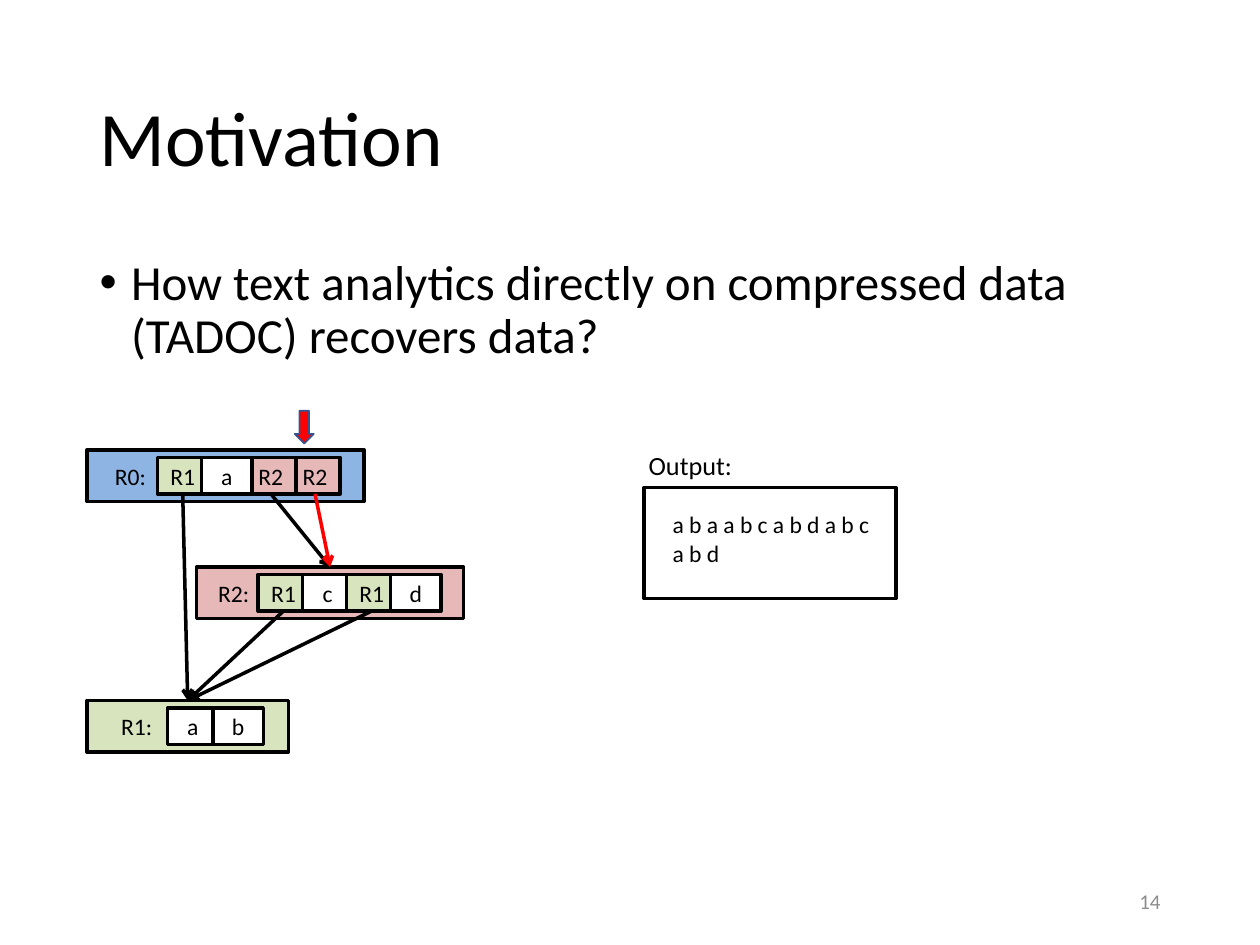
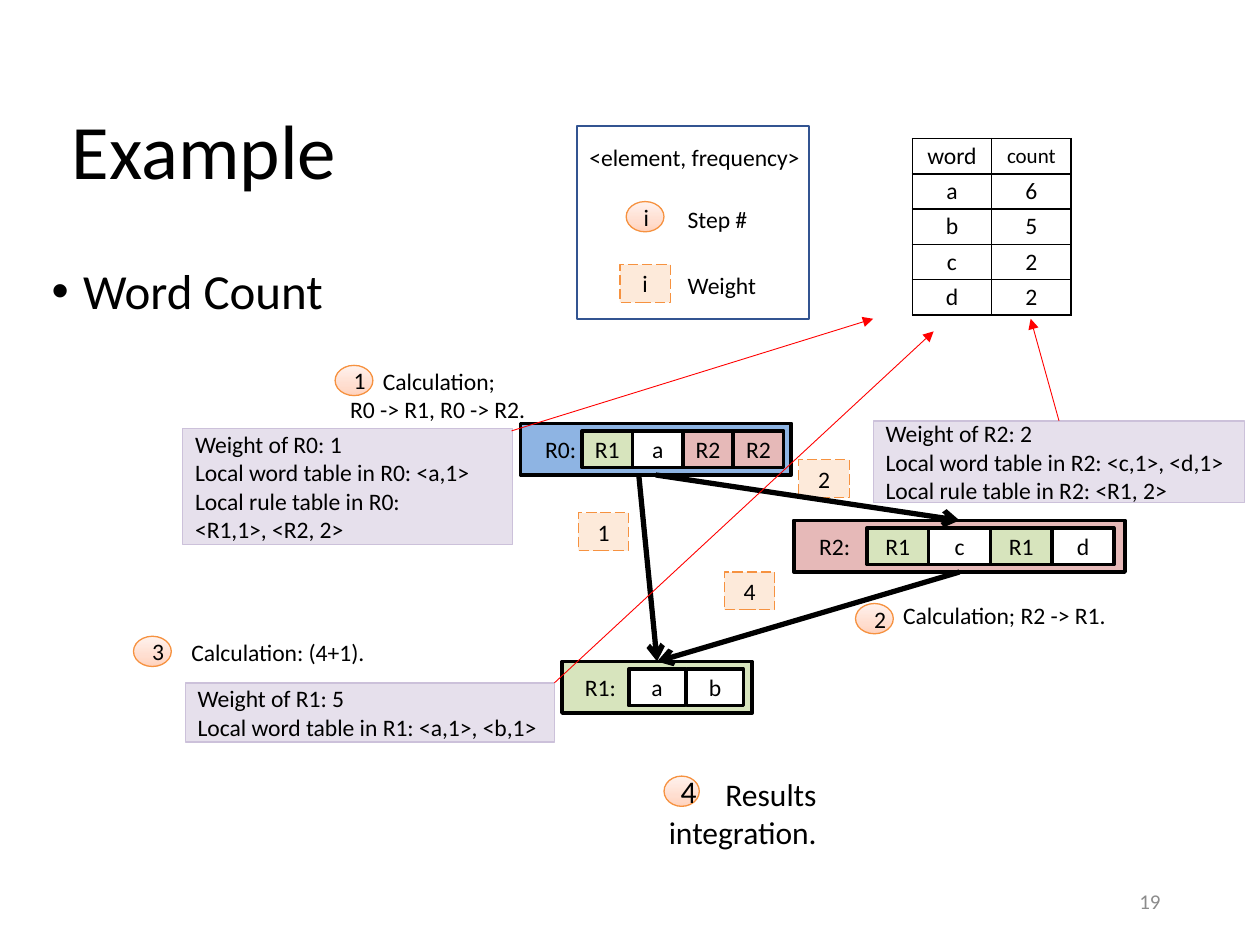
from copy import deepcopy

from lxml.etree import SubElement
from pptx import Presentation
from pptx.dml.color import RGBColor
from pptx.enum.dml import MSO_LINE
from pptx.enum.shapes import MSO_CONNECTOR, MSO_SHAPE
from pptx.enum.text import MSO_ANCHOR, MSO_AUTO_SIZE, PP_ALIGN
from pptx.oxml.ns import qn
from pptx.util import Inches, Pt

BLACK = RGBColor(0x00, 0x00, 0x00)
WHITE = RGBColor(0xFF, 0xFF, 0xFF)
GRAY = RGBColor(0x8C, 0x8C, 0x8C)
RED = RGBColor(0xFF, 0x00, 0x00)
NAVY = RGBColor(0x32, 0x54, 0x91)
BLUE = RGBColor(0x8E, 0xB4, 0xE3)
GREEN = RGBColor(0xD7, 0xE4, 0xBD)
PINK = RGBColor(0xE6, 0xB9, 0xB8)
LILAC = RGBColor(0xE6, 0xE0, 0xEC)
LILAC_EDGE = RGBColor(0xCC, 0xC1, 0xDA)
PEACH = RGBColor(0xFD, 0xEA, 0xDA)
ORANGE = RGBColor(0xF6, 0x92, 0x40)
STEP_GRADIENT = [
    (0, RGBColor(0xFF, 0xD2, 0xBD)),
    (0.35, RGBColor(0xFF, 0xDE, 0xD0)),
    (1, RGBColor(0xFF, 0xF2, 0xED)),
]
RULE_FILLS = {"R0": BLUE, "R1": GREEN, "R2": PINK}
FONT = "Calibri"


def write_text(frame, text, size=13.5, color=BLACK, align=PP_ALIGN.LEFT,
               anchor=MSO_ANCHOR.TOP, insets=(0.1, 0.1), first_indents=()):
    """Fill a text frame, one paragraph a line; first_indents are in inches."""
    frame.word_wrap = True
    frame.auto_size = MSO_AUTO_SIZE.NONE
    frame.vertical_anchor = anchor
    frame.margin_left, frame.margin_right = (Inches(inset) for inset in insets)
    for index, line in enumerate(text.split("\n")):
        paragraph = frame.add_paragraph() if index else frame.paragraphs[0]
        paragraph.alignment = align
        run = paragraph.add_run()
        run.text = line
        run.font.name = FONT
        run.font.size = Pt(size)
        run.font.color.rgb = color
        if first_indents:
            properties = paragraph._p.get_or_add_pPr()
            properties.set("marL", "0")
            properties.set("indent", str(Inches(first_indents[index])))


def add_box(slide, at, text="", kind=MSO_SHAPE.RECTANGLE, fill=None, edge=None,
            edge_width=2, **text_format):
    shape = slide.shapes.add_shape(kind, *(Inches(length) for length in at))
    shape.shadow.inherit = False
    if fill is None:
        shape.fill.background()
    else:
        shape.fill.solid()
        shape.fill.fore_color.rgb = fill
    if edge is None:
        shape.line.fill.background()
    else:
        shape.line.color.rgb = edge
        shape.line.width = Pt(edge_width)
    if text:
        write_text(shape.text_frame, text, **text_format)
    return shape


presentation = Presentation()
presentation.slide_width = Inches(10)
presentation.slide_height = Inches(7.5)
CENTERED = {"align": PP_ALIGN.CENTER, "anchor": MSO_ANCHOR.MIDDLE, "insets": (0, 0)}

# Titles, bullets and page numbers
pages = [
    ("Motivation", (0.69, 0.4, 8.62, 1.45),
     "How text analytics directly on compressed data (TADOC) recovers data?",
     (0.69, 2, 8.62, 4.76), "14"),
    ("Example", (0.47, 0.68, 4.3, 1.09), "Word Count", (0.31, 2.07, 8.62, 3.57), "19"),
]
slides = []
for title, title_at, bullet, bullet_at, number in pages:
    slide = presentation.slides.add_slide(presentation.slide_layouts[1])
    slides.append(slide)
    for placeholder, at, text, size, anchor in (
        (slide.shapes.title, title_at, title, 44, MSO_ANCHOR.MIDDLE),
        (slide.placeholders[1], bullet_at, bullet, 28, MSO_ANCHOR.TOP),
    ):
        placeholder.left, placeholder.top, placeholder.width, placeholder.height = (
            Inches(length) for length in at)
        write_text(placeholder.text_frame, text, size=size, anchor=anchor)
        placeholder.text_frame.paragraphs[0].line_spacing = 0.9
    bullet_paragraph = slide.placeholders[1].text_frame.paragraphs[0]
    bullet_paragraph.space_before = Pt(10)
    bullet_properties = bullet_paragraph._p.get_or_add_pPr()
    bullet_properties.set("marL", str(Inches(0.25)))
    bullet_properties.set("indent", str(Inches(-0.25)))
    add_box(slide, (7.06, 6.95, 2.25, 0.4), number, size=12, color=GRAY,
            align=PP_ALIGN.RIGHT, anchor=MSO_ANCHOR.MIDDLE)
motivation, example = slides

# Motivation: the recovered output and the reading position
add_box(motivation, (5.11, 3.87, 2, 0.88), edge=BLACK)
add_box(motivation, (5.05, 3.52, 0.94, 0.35), "Output:", size=15)
add_box(motivation, (5.24, 4, 1.83, 0.56), "a b a a b c a b d a b c a b d")
add_box(motivation, (2.34, 3.26, 0.15, 0.26), kind=MSO_SHAPE.DOWN_ARROW,
        fill=RED, edge=NAVY, edge_width=1)

# Example: notes on each rule
notes = {}
for rule, at, text in (
    ("R1", (1.47, 5.42, 2.93, 0.47),
     "Weight of R1: 5\nLocal word table in R1: <a,1>, <b,1>"),
    ("R2", (6.93, 3.34, 2.95, 0.65),
     "Weight of R2: 2\nLocal word table in R2: <c,1>, <d,1>\n"
     "Local rule table in R2: <R1, 2>"),
    ("R0", (1.45, 3.4, 2.62, 0.92),
     "Weight of R0: 1\nLocal word table in R0: <a,1>\n"
     "Local rule table in R0:\n<R1,1>, <R2, 2>"),
):
    notes[rule] = add_box(example, at, text, fill=LILAC, edge=LILAC_EDGE,
                          edge_width=0.75, anchor=MSO_ANCHOR.MIDDLE)

# Example: step descriptions, weights and numbered steps, legend included
for at, text, size, first_indents in (
    ((1, 5.01, 3.6, 0.33), "Calculation: (4+1).", 13.5, (0.42,)),
    ((2.64, 2.86, 2.99, 0.56), "Calculation;\nR0 -> R1, R0 -> R2.", 13.5, (0.3, 0.04)),
    ((6.74, 4.72, 3.08, 0.33), "Calculation; R2 -> R1.", 13.5, (0.33,)),
    ((5.21, 6.1, 1.4, 0.4), "Results integration.", 18, (0.45,)),
):
    add_box(example, at, text, size=size, first_indents=first_indents)

for left, top, weight in ((5.75, 4.54, "4"), (6.34, 3.65, "2"),
                          (4.59, 4.07, "1"), (4.92, 2.1, "i")):
    weight_box = add_box(example, (left, top, 0.4, 0.3), weight, fill=PEACH,
                         edge=ORANGE, edge_width=0.75, **CENTERED)
    weight_box.line.dash_style = MSO_LINE.LONG_DASH

for left, top, width, step, size, left_inset in (
    (2.66, 2.9, 0.3, "1", 13.5, 0.09),
    (6.79, 4.79, 0.3, "2", 13.5, 0.09),
    (1.06, 5.05, 0.3, "3", 13.5, 0.09),
    (5.27, 6.16, 0.28, "4", 18, 0.09),
    (4.97, 1.6, 0.3, "i", 13.5, 0.02),
):
    circle = add_box(example, (left, top, width, 0.24), step, kind=MSO_SHAPE.OVAL,
                     edge=ORANGE, edge_width=0.75, size=size,
                     **{**CENTERED, "insets": (left_inset, 0)})
    circle.fill.gradient()
    circle.fill.gradient_angle = 90
    stop_list = circle._element.spPr.find(".//" + qn("a:gsLst"))
    stop_list.append(deepcopy(stop_list[-1]))
    for stop, (position, color) in zip(circle.fill.gradient_stops, STEP_GRADIENT):
        stop.position = position
        stop.color.rgb = color

for at, text in (((5.36, 1.59, 1.07, 0.29), "Step #"),
                 ((5.36, 2.12, 0.98, 0.28), "Weight"),
                 ((4.58, 1.14, 1.94, 0.22), "<element, frequency>")):
    add_box(example, at, text, anchor=MSO_ANCHOR.MIDDLE)
add_box(example, (4.58, 1, 1.84, 1.53), edge=NAVY, edge_width=1)

# Example: word counts
word_counts = [("word", "count"), ("a", "6"), ("b", "5"), ("c", "2"), ("d", "2")]
table = example.shapes.add_table(
    len(word_counts), 2, Inches(7.24), Inches(1.1), Inches(1.26), Inches(1.4)).table
table.first_row = table.horz_banding = False
for row_index, row in enumerate(word_counts):
    for column_index, text in enumerate(row):
        cell = table.cell(row_index, column_index)
        cell.margin_left = cell.margin_right = cell.margin_top = cell.margin_bottom = 0
        cell.vertical_anchor = MSO_ANCHOR.MIDDLE
        cell.fill.solid()
        cell.fill.fore_color.rgb = WHITE
        paragraph = cell.text_frame.paragraphs[0]
        paragraph.alignment = PP_ALIGN.CENTER
        run = paragraph.add_run()
        run.text = text
        run.font.name = FONT
        run.font.size = Pt(12 if text == "count" else 13.5)
        run.font.color.rgb = BLACK
        cell_properties = cell._tc.get_or_add_tcPr()
        for position, side in enumerate(("lnL", "lnR", "lnT", "lnB")):
            border = SubElement(cell_properties, qn(f"a:{side}"), w=str(Pt(1)))
            border_fill = SubElement(border, qn("a:solidFill"))
            SubElement(border_fill, qn("a:srgbClr"), val=str(BLACK))
            cell_properties.insert(position, border)

# Rules: a band, its label and a row of elements, listed in drawing order
bands, elements = {}, {}
for slide, rule, band_at, label_span, first_left, step, width, row, order in (
    (motivation, "R1", (0.69, 5.56, 1.6, 0.41), (0.76, 0.65), 1.33, 0.36, 0.4,
     ("a", "b"), (0, 1)),
    (motivation, "R2", (1.56, 4.5, 2.12, 0.41), (1.59, 0.53), 2.05, 0.35, 0.4,
     ("R1", "c", "R1", "d"), (0, 1, 2, 3)),
    (motivation, "R0", (0.69, 3.57, 2.2, 0.41), (0.73, 0.61), 1.25, 0.35, 0.4,
     ("R1", "a", "R2", "R2"), (3, 0, 2, 1)),
    (example, "R0", (4.13, 3.36, 2.15, 0.41), (4.18, 0.54), 4.62, 0.4, 0.4,
     ("R1", "a", "R2", "R2"), (0, 1, 2, 3)),
    (example, "R2", (6.3, 4.13, 2.63, 0.41), (6.38, 0.49), 6.88, 0.49, 0.49,
     ("R1", "c", "R1", "d"), (0, 1, 2, 3)),
    (example, "R1", (4.46, 5.25, 1.51, 0.41), (4.54, 0.45), 4.99, 0.46, 0.45,
     ("a", "b"), (0, 1)),
):
    fill = RULE_FILLS[rule]
    top = band_at[1] + 0.06
    bands[slide.slide_id, rule] = add_box(slide, band_at, fill=fill, edge=BLACK)
    label_left, label_width = label_span
    add_box(slide, (label_left, top, label_width, 0.29), f"{rule}:", fill=fill, **CENTERED)
    for column in order:
        elements[slide.slide_id, rule, column] = add_box(
            slide, (first_left + column * step, top, width, 0.29), row[column],
            fill=RULE_FILLS.get(row[column], WHITE), edge=BLACK, **CENTERED)

# Arrows: each end is a point or a shape, left at begin_site and reached at its top
BOTTOM, TOP = 2, 0
tree = [(motivation, elements[motivation.slide_id, rule, column], BOTTOM,
         bands[motivation.slide_id, target], color, 2, "arrow")
        for rule, column, target, color in (
            ("R0", 2, "R2", BLACK), ("R0", 3, "R2", RED), ("R0", 0, "R1", BLACK),
            ("R2", 0, "R1", BLACK), ("R2", 2, "R1", BLACK))]
tree += [(example, begin, BOTTOM, bands[example.slide_id, target], BLACK, 3, "arrow")
         for begin, target in (((5.07, 3.77), "R1"),
                               (bands[example.slide_id, "R2"], "R1"),
                               (bands[example.slide_id, "R0"], "R2"))]
to_counts = [(example, begin, TOP, end, RED, 0.5, "triangle")
             for begin, end in (((4.06, 3.42), (6.93, 2.53)),
                                (notes["R2"], (8.18, 2.53)),
                                ((4.4, 5.42), (7.41, 2.63)))]
for slide, begin, begin_site, end, color, width, head in tree + to_counts:
    points = [point if isinstance(point, tuple) else (0, 0) for point in (begin, end)]
    arrow = slide.shapes.add_connector(
        MSO_CONNECTOR.STRAIGHT, *(Inches(length) for point in points for length in point))
    if not isinstance(begin, tuple):
        arrow.begin_connect(begin, begin_site)
    if not isinstance(end, tuple):
        arrow.end_connect(end, TOP)
    arrow.line.color.rgb = color
    arrow.line.width = Pt(width)
    SubElement(arrow.line._get_or_add_ln(), qn("a:tailEnd"), type=head)
    SubElement(arrow._element.spPr, qn("a:effectLst"))

presentation.save("out.pptx")
